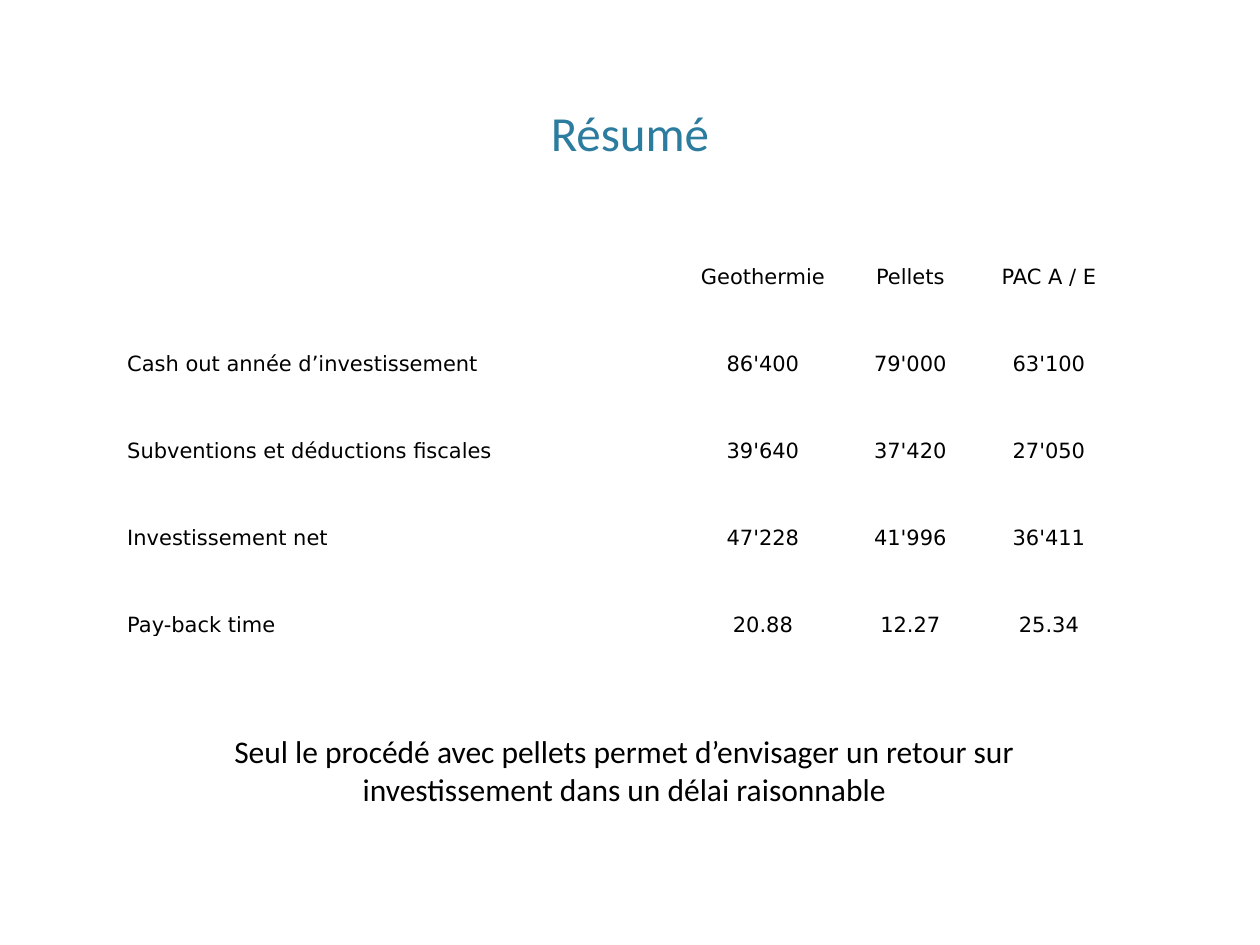
"""Build the summary slide comparing three heating investments."""
import pptx
import pptx.dml.color
import pptx.enum.text
import pptx.util

Inches = pptx.util.Inches
ALIGN = pptx.enum.text.PP_ALIGN
ANCHOR = pptx.enum.text.MSO_ANCHOR
COLORS = {"title": "2C7C9F", "text": "000000"}


def add_run(paragraph, text, size, font, color, align=ALIGN.CENTER):
    paragraph.alignment = align
    run = paragraph.add_run()
    run.text = text
    run.font.size = pptx.util.Pt(size)
    run.font.name = font
    run.font.color.rgb = pptx.dml.color.RGBColor.from_string(COLORS[color])


def add_text(slide, box, anchor, text, size, color):
    frame = slide.shapes.add_textbox(*map(Inches, box)).text_frame
    frame.word_wrap = True
    frame.vertical_anchor = anchor
    add_run(frame.paragraphs[0], text, size, "Calibri", color)


presentation = pptx.Presentation()
presentation.slide_width = Inches(10)
presentation.slide_height = Inches(7.5)
slide = presentation.slides.add_slide(presentation.slide_layouts[6])

add_text(slide, (0.6, 0.12, 8.8, 1.21), ANCHOR.BOTTOM, "Résumé", 28, "title")

comparison = [
    ("", "Geothermie", "Pellets", "PAC A / E"),
    ("Cash out année d’investissement", "86'400", "79'000", "63'100"),
    ("Subventions et déductions fiscales", "39'640", "37'420", "27'050"),
    ("Investissement net", "47'228", "41'996", "36'411"),
    ("Pay-back time", "20.88", "12.27", "25.34"),
]
column_widths = [4.4, 1.31, 1.03, 1.17]
row_count = 2 * len(comparison) - 1
summary = slide.shapes.add_table(
    row_count, len(column_widths), Inches(1), Inches(1.95), Inches(7.91), Inches(3.11)
).table
summary.first_row = False
summary.horz_banding = False
for column, width in zip(summary.columns, column_widths):
    column.width = Inches(width)
for row in summary.rows:
    row.height = Inches(3.11 / row_count)

for cell in summary.iter_cells():
    cell.fill.background()
    cell.vertical_anchor = ANCHOR.BOTTOM
    cell.margin_left = cell.margin_right = cell.margin_top = Inches(0.01)
    cell.margin_bottom = 0

for line, entries in enumerate(comparison):
    for position, entry in enumerate(entries):
        if entry:
            paragraph = summary.cell(2 * line, position).text_frame.paragraphs[0]
            align = ALIGN.CENTER if position else ALIGN.LEFT
            add_run(paragraph, entry, 12, "DejaVu Sans", "text", align)

conclusion = (
    "Seul le procédé avec pellets permet d’envisager un retour sur "
    "investissement dans un délai raisonnable"
)
add_text(slide, (1, 5.76, 7.91, 0.71), ANCHOR.TOP, conclusion, 18, "text")

presentation.save("out.pptx")
